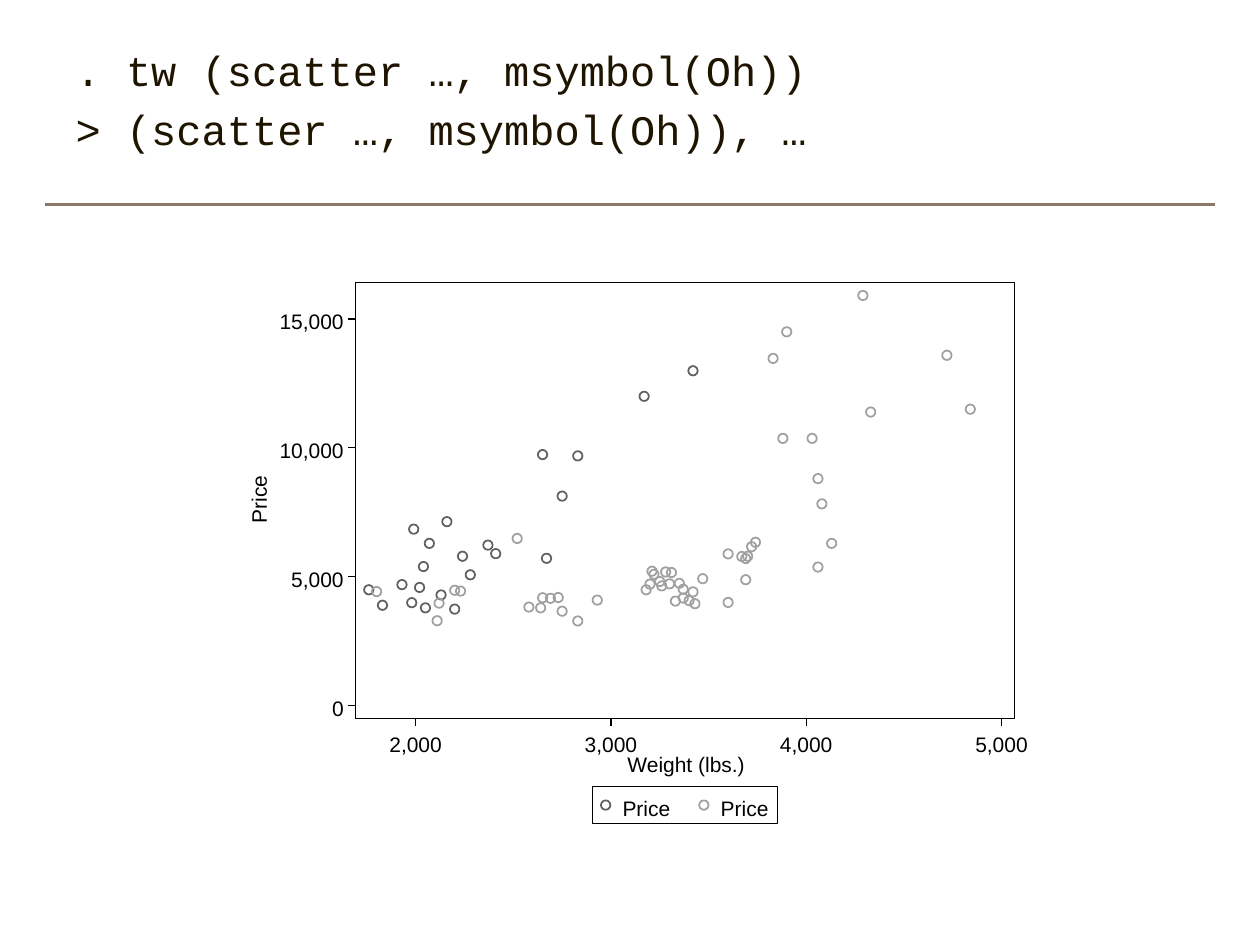
import pptx
import pptx.dml.color
import pptx.enum.shapes
import pptx.enum.text
import pptx.oxml.ns
import pptx.util
from lxml import etree

Cm, Pt = pptx.util.Cm, pptx.util.Pt
RGB = pptx.dml.color.RGBColor.from_string
qn = pptx.oxml.ns.qn
SHAPE = pptx.enum.shapes.MSO_SHAPE
ALIGN = pptx.enum.text.PP_ALIGN

THEME = {
    "code": dict(font="Courier New", size=24, color="1E1400"),
    "label": dict(font="Arial", size=12, color="000000"),
    "ink": "000000", "paper": "FFFFFF", "rule": "8A7967",
    "rule_width": 1.5, "axis_width": 0.63, "marker_width": 1,
}

COMMAND = [". tw (scatter …, msymbol(Oh))", "> (scatter …, msymbol(Oh)), …"]

# (weight, price)
FIRST_GROUP = [
    (2830, 9690), (2070, 6300), (2650, 9740), (2370, 6230), (2020, 4590),
    (2280, 5080), (2750, 8130), (2130, 4300), (2240, 5800), (1760, 4500),
    (1980, 4000), (3420, 12990), (1830, 3900), (2050, 3800), (2410, 5900),
    (2200, 3750), (2670, 5720), (2160, 7140), (2040, 5400), (1930, 4700),
    (1990, 6850), (3170, 12000),
]
SECOND_GROUP = [
    (2930, 4100), (3350, 4750), (2640, 3800), (3250, 4820), (4080, 7830),
    (3670, 5790), (2230, 4450), (3280, 5190), (3880, 10370), (3400, 4080),
    (4330, 11390), (3900, 14500), (4290, 15910), (2110, 3300), (3690, 5710),
    (3180, 4500), (3220, 5100), (2750, 3670), (3430, 3960), (2120, 3980),
    (3600, 4010), (3600, 5890), (3740, 6340), (2650, 4190), (4840, 11500),
    (4720, 13590), (3830, 13470), (2580, 3830), (4060, 5380), (3720, 6170),
    (3370, 4520), (4130, 6300), (2830, 3290), (4060, 8810), (3310, 5170),
    (3300, 4730), (3690, 4890), (3370, 4180), (2730, 4200), (4030, 10370),
    (3260, 4650), (1800, 4430), (2200, 4480), (2520, 6490), (3330, 4060),
    (3700, 5800), (3470, 4930), (3210, 5220), (3200, 4720), (3420, 4420),
    (2690, 4170),
]
SERIES = [("Price", "606060", FIRST_GROUP), ("Price", "A0A0A0", SECOND_GROUP)]
WEIGHT_TICKS = range(2000, 5001, 1000)
PRICE_TICKS = range(0, 15001, 5000)

# Centimetres: left, top, width, height
PANEL = (4.52, 5.27, 16.34, 11.9)
PLOT = (7.16, 5.69, 13.29, 8.8)
LEGEND = (11.94, 15.85, 3.73, 0.76)
LEGEND_STEP = 1.98
MARKER = 0.19
TICK = 0.15
LABEL_HEIGHT = 0.56


def weight_x(weight):
    return 8.38 + (weight - 2000) * 3.937 / 1000


def price_y(price):
    return 14.23 - price * 2.6 / 5000


def number_width(text):
    """Width in centimetres of figures and commas at the label size."""
    return sum(0.12 if c == "," else 0.235 for c in text)


def add_text(p, text, *, size, font, color):
    r = p.add_run()
    r.text = text
    r.font.size, r.font.name = Pt(size), font
    r.font.color.rgb = RGB(color)
    return r


def add_label(shapes, text, left, top, width, align=ALIGN.LEFT, rotation=0):
    box = shapes.add_textbox(Cm(left), Cm(top), Cm(width), Cm(LABEL_HEIGHT))
    box.rotation = rotation
    tf = box.text_frame
    tf.margin_left = tf.margin_right = tf.margin_top = tf.margin_bottom = 0
    tf.word_wrap = True
    tf.paragraphs[0].alignment = align
    add_text(tf.paragraphs[0], text, **THEME["label"])


def add_line(shapes, x1, y1, x2, y2, color=THEME["ink"], width=THEME["axis_width"]):
    line = shapes.add_connector(pptx.enum.shapes.MSO_CONNECTOR.STRAIGHT,
                                Cm(x1), Cm(y1), Cm(x2), Cm(y2))
    line.line.color.rgb = RGB(color)
    line.line.width = Pt(width)
    etree.SubElement(line._element.spPr, qn("a:effectLst"))


def add_outline(shapes, kind, box, color, width=THEME["axis_width"], fill=None):
    sp = shapes.add_shape(kind, *map(Cm, box))
    sp.shadow.inherit = False
    if fill:
        sp.fill.solid()
        sp.fill.fore_color.rgb = RGB(fill)
    else:
        sp.fill.background()
    sp.line.color.rgb = RGB(color)
    sp.line.width = Pt(width)


def add_marker(shapes, x, y, color):
    add_outline(shapes, SHAPE.OVAL, (x - MARKER / 2, y - MARKER / 2, MARKER, MARKER),
                color, THEME["marker_width"])


def add_command(s):
    body = s.placeholders[1]
    body.left, body.top, body.width, body.height = Cm(1.27), Cm(0.76), Cm(22.86), Cm(12.57)
    tf = body.text_frame
    tf.word_wrap = True
    tf.auto_size = pptx.enum.text.MSO_AUTO_SIZE.NONE
    for i, text in enumerate(COMMAND):
        p = tf.add_paragraph() if i else tf.paragraphs[0]
        p.space_before = Pt(5)
        pPr = p._p.get_or_add_pPr()
        pPr.set("marL", "0")
        pPr.set("indent", "0")
        etree.SubElement(pPr, qn("a:buNone"))
        add_text(p, text, **THEME["code"])


def add_axes(shapes):
    left, top, width, height = PLOT
    bottom = top + height
    add_line(shapes, left, bottom, left, top)
    for price in PRICE_TICKS:
        y, text = price_y(price), f"{price:,}"
        add_line(shapes, left, y, left - TICK, y)
        text_width = number_width(text)
        add_label(shapes, text, 6.93 - text_width, y - 0.21, text_width + 0.18)
    add_label(shapes, "Price", 4.67, 9.79, 1.14, ALIGN.CENTER, rotation=270)

    add_line(shapes, left, bottom, left + width, bottom)
    for weight in WEIGHT_TICKS:
        x, text = weight_x(weight), f"{weight:,}"
        add_line(shapes, x, bottom, x, bottom + TICK)
        text_width = number_width(text)
        add_label(shapes, text, x - text_width / 2, 14.75, text_width + 0.18)
    add_label(shapes, "Weight (lbs.)", 12.65, 15.16, 2.59)


def add_legend(shapes):
    left, top, _, height = LEGEND
    add_outline(shapes, SHAPE.RECTANGLE, LEGEND, THEME["ink"], fill=THEME["paper"])
    for i, (name, color, _) in enumerate(SERIES):
        x = left + 0.27 + i * LEGEND_STEP
        add_marker(shapes, x, top + height / 2, color)
        add_label(shapes, name, x + 0.34, 16.03, 1.14)


def add_scatter(s):
    shapes = s.shapes.add_group_shape().shapes
    add_outline(shapes, SHAPE.RECTANGLE, PANEL, THEME["paper"], fill=THEME["paper"])
    add_outline(shapes, SHAPE.RECTANGLE, PLOT, THEME["ink"])
    for _, color, points in SERIES:
        for weight, price in points:
            add_marker(shapes, weight_x(weight), price_y(price), color)
    add_axes(shapes)
    add_legend(shapes)


def main():
    prs = pptx.Presentation()
    prs.slide_width, prs.slide_height = Cm(25.4), Cm(19.05)
    s = prs.slides.add_slide(prs.slide_layouts[1])
    title = s.shapes.title._element
    title.getparent().remove(title)
    add_line(s.shapes, 0.9, 4.12, 24.5, 4.12, THEME["rule"], THEME["rule_width"])
    add_command(s)
    add_scatter(s)
    prs.save("out.pptx")


if __name__ == "__main__":
    main()
